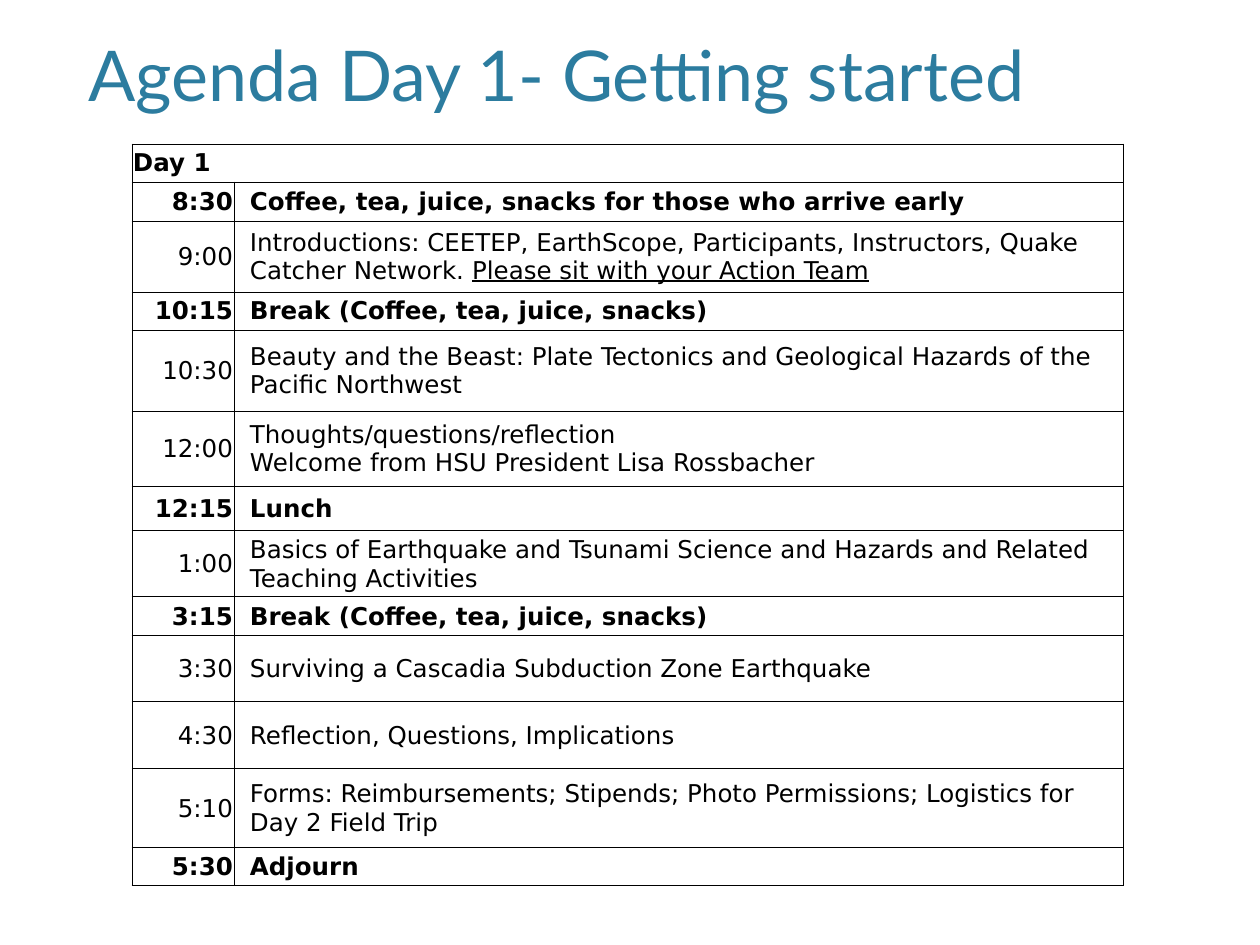
from dataclasses import dataclass

from lxml import etree
from pptx import Presentation
from pptx.dml.color import RGBColor
from pptx.enum.text import MSO_ANCHOR, PP_ALIGN
from pptx.oxml.ns import qn
from pptx.util import Emu, Pt

RIGHT = PP_ALIGN.RIGHT
LEFT = PP_ALIGN.LEFT
MIDDLE = MSO_ANCHOR.MIDDLE
BOTTOM = MSO_ANCHOR.BOTTOM
EMU_PER_PX = 914400 / 126


@dataclass(frozen=True)
class Theme:
    title_color: RGBColor = RGBColor(0x2C, 0x7C, 0x9F)
    text_color: RGBColor = RGBColor(0, 0, 0)
    border_color: str = "000000"
    title_font: str = "Lato"
    table_font: str = "DejaVu Sans"
    title_size: int = 40
    table_size: int = 14
    border_width: float = 0.5


THEME = Theme()
TIME_WIDTH = 102
INDENT = 15

# Row height, time, bold, paragraphs; each paragraph is a list of (text, underlined)
AGENDA = [
    (39, "8:30", True, [[("Coffee, tea, juice, snacks for those who arrive early", False)]]),
    (71, "9:00", False, [[
        ("Introductions: CEETEP, EarthScope, Participants, Instructors, "
         "Quake Catcher Network. ", False),
        ("Please sit with your Action Team", True)]]),
    (38, "10:15", True, [[("Break (Coffee, tea, juice, snacks)", False)]]),
    (81, "10:30", False, [[
        ("Beauty and the Beast: Plate Tectonics and Geological Hazards "
         "of the Pacific Northwest", False)]]),
    (75, "12:00", False, [
        [("Thoughts/questions/reflection", False)],
        [("Welcome from HSU President Lisa Rossbacher", False)]]),
    (45, "12:15", True, [[("Lunch", False)]]),
    (66, "1:00", False, [[
        ("Basics of Earthquake and Tsunami Science and Hazards and "
         "Related Teaching Activities", False)]]),
    (39, "3:15", True, [[("Break (Coffee, tea, juice, snacks)", False)]]),
    (66, "3:30", False, [[("Surviving a Cascadia Subduction Zone Earthquake", False)]]),
    (67, "4:30", False, [[("Reflection, Questions, Implications", False)]]),
    (79, "5:10", False, [[
        ("Forms: Reimbursements; Stipends; Photo Permissions; "
         "Logistics for Day 2 Field Trip", False)]]),
    (38, "5:30", True, [[("Adjourn", False)]]),
]
HEADER_HEIGHT = 38


def px(length):
    return Emu(round(length * EMU_PER_PX))


def style_font(font, name, size, color):
    font.name = name
    font.size = Pt(size)
    font.color.rgb = color


def add_title(slide, left, top, width, height):
    text_box = slide.shapes.add_textbox(px(left), px(top), px(width), px(height))
    text_frame = text_box.text_frame
    text_frame.word_wrap = True
    text_frame.vertical_anchor = BOTTOM
    text_frame.text = "Agenda Day 1- Getting started"
    run = text_frame.paragraphs[0].runs[0]
    style_font(run.font, THEME.title_font, THEME.title_size, THEME.title_color)


def add_borders(cell):
    """Outline all four sides; the lines must precede the fill in tcPr."""
    properties = cell._tc.get_or_add_tcPr()
    for position, side in enumerate(("lnL", "lnR", "lnT", "lnB")):
        line = etree.Element(qn(f"a:{side}"), w=str(Pt(THEME.border_width)))
        fill = etree.SubElement(line, qn("a:solidFill"))
        etree.SubElement(fill, qn("a:srgbClr"), val=THEME.border_color)
        properties.insert(position, line)


def fill_cell(cell, paragraphs, bold, alignment=LEFT, indent=0):
    cell.margin_left = cell.margin_right = cell.margin_top = px(1)
    cell.margin_bottom = 0
    cell.vertical_anchor = MIDDLE
    text_frame = cell.text_frame
    for index, pieces in enumerate(paragraphs):
        paragraph = text_frame.add_paragraph() if index else text_frame.paragraphs[0]
        paragraph.alignment = alignment
        if indent:
            paragraph._p.get_or_add_pPr().set("marL", str(px(indent)))
        for text, underlined in pieces:
            run = paragraph.add_run()
            run.text = text
            style_font(run.font, THEME.table_font, THEME.table_size, THEME.text_color)
            run.font.bold = bold
            run.font.underline = underlined


def add_agenda(slide, left, top, width):
    heights = [HEADER_HEIGHT] + [row[0] for row in AGENDA]
    table = slide.shapes.add_table(
        len(heights), 2, px(left), px(top), px(width), px(sum(heights))).table
    table.first_row = table.horz_banding = False
    table.columns[0].width = px(TIME_WIDTH)
    table.columns[1].width = px(width - TIME_WIDTH)
    for row, height in zip(table.rows, heights):
        row.height = px(height)
    for cell in table.iter_cells():
        cell.fill.background()
        add_borders(cell)

    table.cell(0, 0).merge(table.cell(0, 1))
    fill_cell(table.cell(0, 0), [[("Day 1", False)]], bold=True)
    for index, (_, time, bold, paragraphs) in enumerate(AGENDA, start=1):
        fill_cell(table.cell(index, 0), [[(time, False)]], bold, alignment=RIGHT)
        fill_cell(table.cell(index, 1), paragraphs, bold, indent=INDENT)


def main():
    presentation = Presentation()
    presentation.slide_width = px(1260)
    presentation.slide_height = px(945)
    slide = presentation.slides.add_slide(presentation.slide_layouts[6])
    add_title(slide, left=76, top=15, width=1109, height=107)
    add_agenda(slide, left=132, top=144, width=991)
    presentation.save("out.pptx")


if __name__ == "__main__":
    main()
